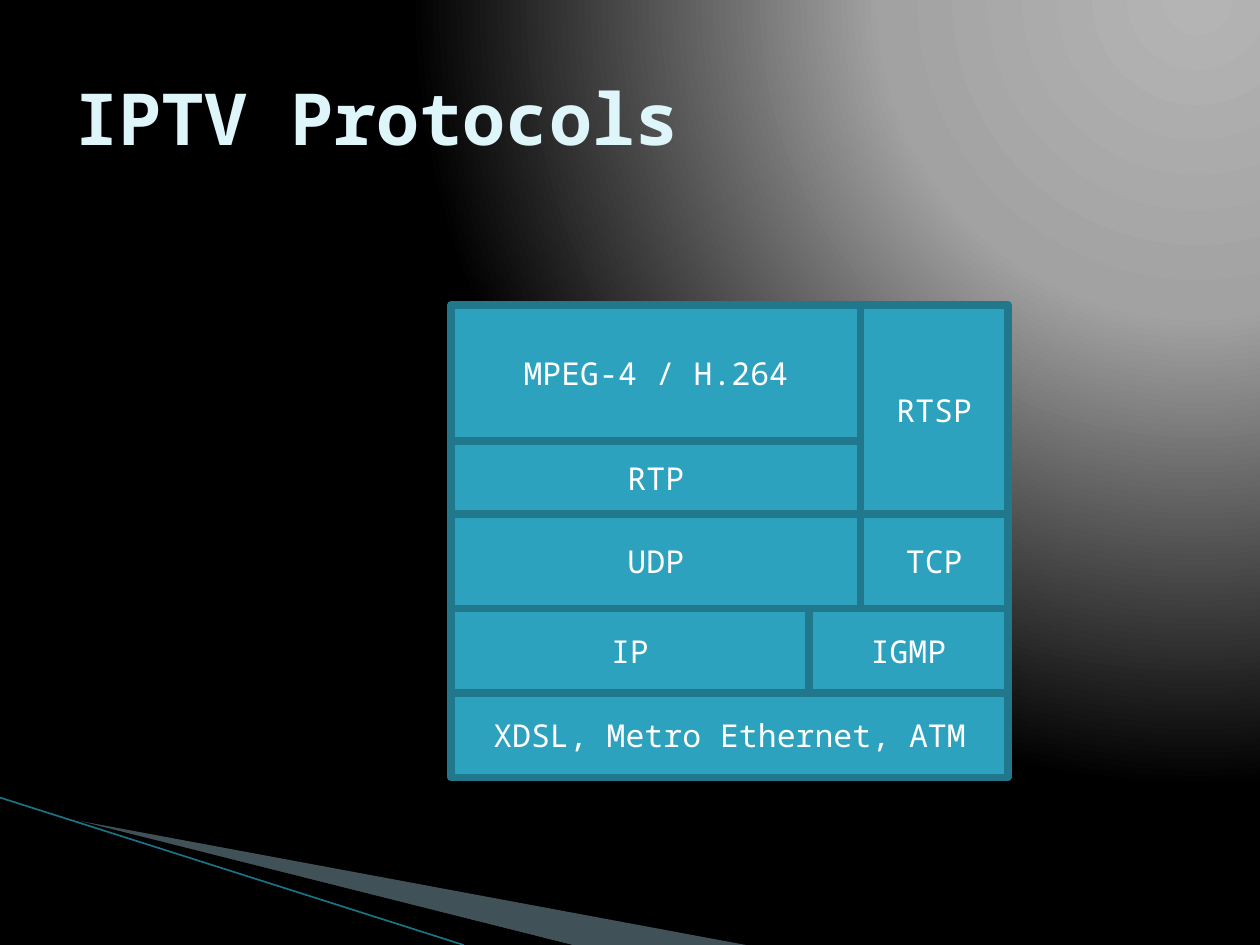
"""Build the IPTV protocol stack slide."""
from dataclasses import dataclass

import pptx
import pptx.dml.color
import pptx.enum.dml
import pptx.enum.shapes
import pptx.enum.text
import pptx.oxml
import pptx.oxml.ns
import pptx.util
from pptx.util import Inches


@dataclass(frozen=True)
class Theme:
    font: str = "Noto Sans Mono"
    title_size: int = 41
    label_size: int = 18
    title: str = "DEF5FA"
    label: str = "FFFFFF"
    block: str = "2DA2BF"
    border: str = "21788D"
    wedge: str = "A0CBDC"
    shade: str = "000000"
    rule: str = "1B7387"
    backdrop: tuple = ((0, "B4B4B4"), (40, "A2A2A2"), (100, "000000"))


def rgb(value):
    return pptx.dml.color.RGBColor.from_string(value)


class SlideBuilder:
    def __init__(self, page, theme):
        self.page = page
        self.theme = theme

    def backdrop(self):
        self.page.background.fill.solid()
        properties = self.page.element.find(".//" + pptx.oxml.ns.qn("p:bgPr"))
        stops = "".join(
            f'<a:gs pos="{position * 1000}"><a:srgbClr val="{color}"/></a:gs>'
            for position, color in self.theme.backdrop
        )
        gradient = pptx.oxml.parse_xml(
            f'<a:gradFill {pptx.oxml.ns.nsdecls("a")} rotWithShape="1">'
            f"<a:gsLst>{stops}</a:gsLst>"
            '<a:path path="circle">'
            '<a:fillToRect l="95000" t="-106000" r="5000" b="206000"/>'
            "</a:path></a:gradFill>"
        )
        properties.replace(properties[0], gradient)

    def label(self, frame, text, size, color, bold=False):
        frame.word_wrap = True
        frame.auto_size = pptx.enum.text.MSO_AUTO_SIZE.NONE
        frame.vertical_anchor = pptx.enum.text.MSO_ANCHOR.MIDDLE
        para = frame.paragraphs[0]
        para.text = text
        para.font.name = self.theme.font
        para.font.size = pptx.util.Pt(size)
        para.font.bold = bold
        para.font.color.rgb = rgb(color)
        return para

    def title(self, text, left, top, width, height):
        box = self.page.shapes.title
        box.left, box.top = Inches(left), Inches(top)
        box.width, box.height = Inches(width), Inches(height)
        para = self.label(box.text_frame, text, self.theme.title_size, self.theme.title, True)
        para.alignment = pptx.enum.text.PP_ALIGN.LEFT

    def polygon(self, points, color, opacity=100):
        corners = [(Inches(x), Inches(y)) for x, y in points]
        builder = self.page.shapes.build_freeform(*corners[0])
        builder.add_line_segments(corners[1:], close=True)
        shape = builder.convert_to_shape()
        shape.shadow.inherit = False
        shape.line.fill.background()
        shape.fill.solid()
        shape.fill.fore_color.rgb = rgb(color)
        if opacity < 100:
            tint = shape.element.spPr.find(".//" + pptx.oxml.ns.qn("a:srgbClr"))
            alpha = pptx.oxml.parse_xml(
                f'<a:alpha {pptx.oxml.ns.nsdecls("a")} val="{opacity * 1000}"/>'
            )
            tint.append(alpha)

    def rule(self, start, end):
        line = self.page.shapes.add_connector(
            pptx.enum.shapes.MSO_CONNECTOR.STRAIGHT, *map(Inches, (*start, *end))
        )
        line.line.color.rgb = rgb(self.theme.rule)
        line.line.width = pptx.util.Pt(0.95)
        line._element.spPr.append(
            pptx.oxml.parse_xml(f'<a:effectLst {pptx.oxml.ns.nsdecls("a")}/>')
        )

    def block(self, text, left, top, right, bottom):
        box = self.page.shapes.add_shape(
            pptx.enum.shapes.MSO_SHAPE.RECTANGLE,
            *map(Inches, (left, top, right - left, bottom - top)),
        )
        box.shadow.inherit = False
        box.fill.solid()
        box.fill.fore_color.rgb = rgb(self.theme.block)
        box.line.color.rgb = rgb(self.theme.border)
        box.line.width = pptx.util.Pt(4.33)
        para = self.label(box.text_frame, text, self.theme.label_size, self.theme.label)
        para.alignment = pptx.enum.text.PP_ALIGN.CENTER


def main():
    deck = pptx.Presentation()
    deck.slide_width, deck.slide_height = Inches(10), Inches(7.5)
    page = deck.slides.add_slide(deck.slide_layouts[5])
    builder = SlideBuilder(page, Theme())

    builder.backdrop()
    builder.polygon([(0.55, 6.5), (5.92, 7.5), (4.54, 7.5)], builder.theme.wedge, 40)
    builder.polygon([(0.53, 6.49), (4.54, 7.5), (3.68, 7.5)], builder.theme.shade)
    builder.rule((0, 6.33), (3.68, 7.5))
    builder.title("IPTV Protocols", 0.5, 0.3, 9, 1.25)

    left, network_split, transport_split, right = 3.58, 6.42, 6.83, 8
    codec, rtp, transport, network, link, base = 2.42, 3.5, 4.08, 4.83, 5.5, 6.17
    stack = [
        ("MPEG-4 / H.264", left, codec, transport_split, rtp),
        ("RTP", left, rtp, transport_split, transport),
        ("UDP", left, transport, transport_split, network),
        ("IP", left, network, network_split, link),
        ("XDSL, Metro Ethernet, ATM", left, link, right, base),
        ("TCP", transport_split, transport, right, network),
        ("RTSP", transport_split, codec, right, transport),
        ("IGMP", network_split, network, right, link),
    ]
    for protocol in stack:
        builder.block(*protocol)

    deck.save("out.pptx")


if __name__ == "__main__":
    main()
